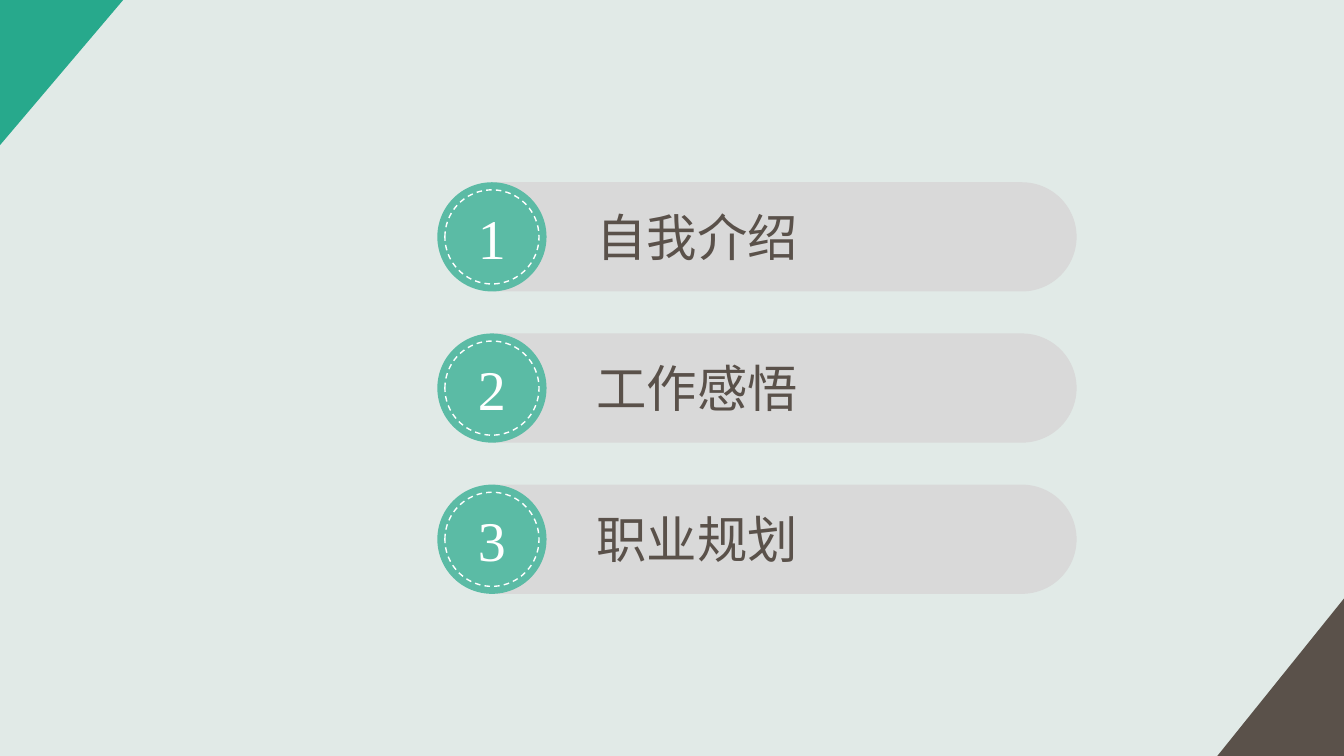
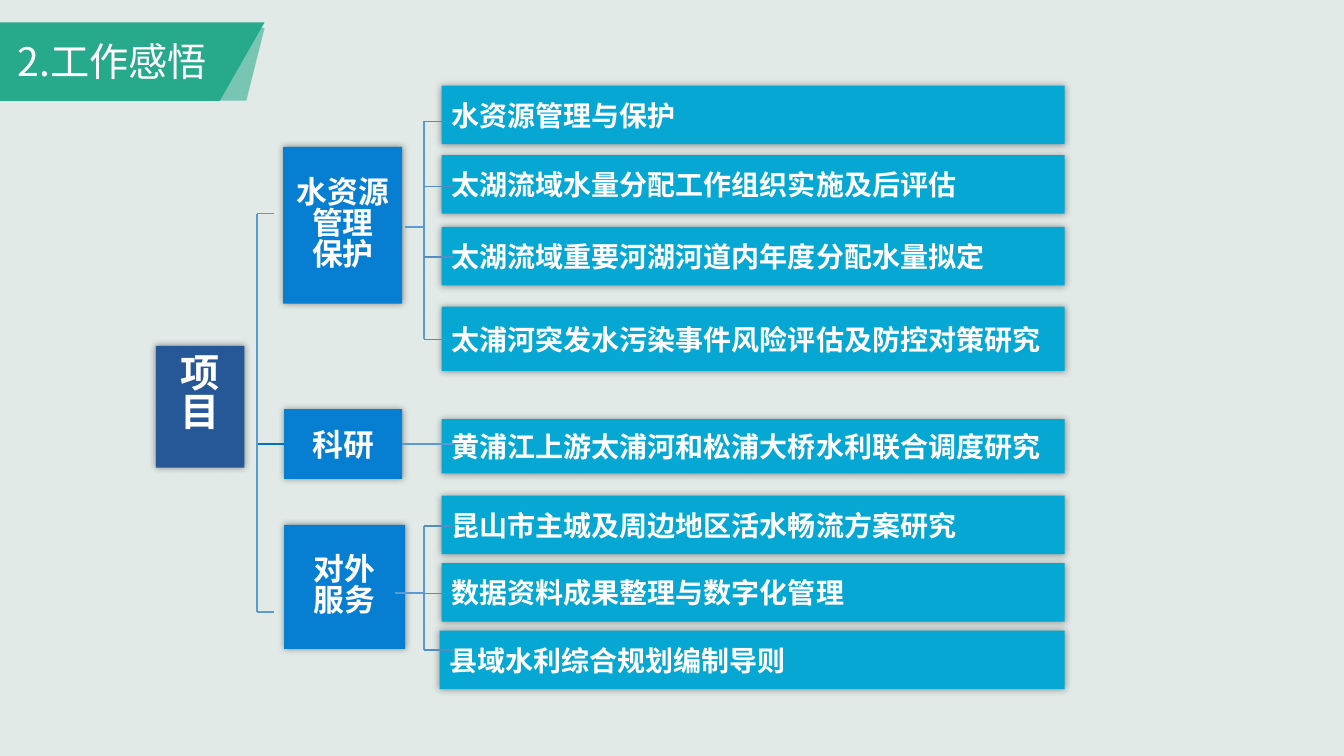
"""Builds a contents slide and a project tree slide."""
from dataclasses import dataclass

from lxml import etree
from pptx import Presentation
from pptx.dml.color import RGBColor
from pptx.enum.dml import MSO_LINE
from pptx.enum.shapes import MSO_CONNECTOR, MSO_SHAPE
from pptx.enum.text import MSO_ANCHOR, MSO_AUTO_SIZE, PP_ALIGN
from pptx.oxml.ns import qn
from pptx.util import Pt

STRAIGHT = MSO_CONNECTOR.STRAIGHT
RECTANGLE, OVAL = MSO_SHAPE.RECTANGLE, MSO_SHAPE.OVAL
TRIANGLE, PILL = MSO_SHAPE.RIGHT_TRIANGLE, MSO_SHAPE.ROUND_2_SAME_RECTANGLE
TOP, MIDDLE = MSO_ANCHOR.TOP, MSO_ANCHOR.MIDDLE
LEFT, CENTER = PP_ALIGN.LEFT, PP_ALIGN.CENTER
NO_AUTOFIT = MSO_AUTO_SIZE.NONE
DASH = MSO_LINE.DASH

WHITE = RGBColor(0xFF, 0xFF, 0xFF)
MIST = RGBColor(0xE1, 0xEA, 0xE7)
GREEN = RGBColor(0x27, 0xA9, 0x8C)
MINT = RGBColor(0x5B, 0xBB, 0xA5)
BROWN = RGBColor(0x5A, 0x51, 0x4A)
GREY = RGBColor(0xD9, 0xD9, 0xD9)
NAVY = RGBColor(0x26, 0x58, 0x97)
BLUE = RGBColor(0x06, 0x7F, 0xD2)
CYAN = RGBColor(0x06, 0xA7, 0xD2)
TRUNK = RGBColor(0x5B, 0x9B, 0xD5)
TWIG = RGBColor(0x53, 0x8D, 0xC1)
LINK = RGBColor(0x00, 0x70, 0xC0)

SANS, SERIF = "Noto Sans CJK SC", "Times New Roman"
WIDTH, HEIGHT = 960, 540
TIGHT = 0.83
ROOT_X, BRANCH_X, TWIG_END = 183.6, 303.1, 324


@dataclass(frozen=True)
class Box:
    """A frame in points."""
    left: float
    top: float
    width: float
    height: float


@dataclass(frozen=True)
class Style:
    """The look of a text."""
    size: float
    color: RGBColor = WHITE
    bold: bool = False
    font: str = SANS
    align: PP_ALIGN = CENTER
    anchor: MSO_ANCHOR = MIDDLE
    top_inset: float = 3.6


@dataclass(frozen=True)
class Node:
    """A filled box of the project tree."""
    lines: tuple[str, ...]
    box: Box
    fill: RGBColor
    style: Style


@dataclass(frozen=True)
class Row:
    """A project bar of the tree."""
    text: str
    top: float
    height: float = 41.8
    left: float = 315.4


TITLE = Style(28)
NUMBER = Style(40, font=SERIF)
ENTRY = Style(36, BROWN, align=LEFT)
ROOT = Style(28, bold=True, anchor=TOP, top_inset=7.4)
GROUP = Style(22, bold=True)
PROJECT = Style(20, bold=True, align=LEFT)

ENTRIES = ("自我介绍", "工作感悟", "职业规划")
NODES = (
    Node(("项", "目"), Box(111.4, 247, 63.2, 87), NAVY, ROOT),
    Node(("水资源管理", "保护"), Box(202.3, 105, 85, 112), BLUE, GROUP),
    Node(("对外", "服务"), Box(203, 375, 86.5, 88.5), BLUE, GROUP),
)
RESEARCH = Node(("科研",), Box(203, 292.2, 84.3, 49.8), BLUE, GROUP)
ROWS = (
    Row("水资源管理与保护", 61.2),
    Row("太湖流域水量分配工作组织实施及后评估", 110.9),
    Row("太湖流域重要河湖河道内年度分配水量拟定", 162),
    Row("太浦河突发水污染事件风险评估及防控对策研究", 219, 46),
    Row("黄浦江上游太浦河和松浦大桥水利联合调度研究", 299.4, 38.8),
    Row("昆山市主城及周边地区活水畅流方案研究", 354),
    Row("数据资料成果整理与数字化管理", 402.3),
    Row("县域水利综合规划编制导则", 450.4, left=314),
)
ROW_RIGHT = 760.5
BRANCHES = ((86.6, 133.2, 183.7, 242.4), (375.8, 424, 464.2))


def write(shape, lines: tuple[str, ...], style: Style) -> None:
    """Fill a shape with one paragraph per line."""
    frame = shape.text_frame
    frame.word_wrap = True
    frame.auto_size = NO_AUTOFIT
    frame.vertical_anchor = style.anchor
    frame.margin_top = Pt(style.top_inset)
    for index, line in enumerate(lines):
        para = frame.add_paragraph() if index else frame.paragraphs[0]
        para.alignment = style.align
        if len(lines) > 1:
            para.line_spacing = TIGHT
        span = para.add_run()
        span.text = line
        span.font.size = Pt(style.size)
        span.font.bold = style.bold
        span.font.color.rgb = style.color
        span.font.name = style.font
        east = etree.SubElement(span.font._element, qn("a:ea"))
        east.set("typeface", style.font)


def paint(shape, fill: RGBColor) -> None:
    """Give a shape a flat fill without line or shadow."""
    shape.shadow.inherit = False
    shape.fill.solid()
    shape.fill.fore_color.rgb = fill
    shape.line.fill.background()


def add_filled(page, kind: MSO_SHAPE, box: Box, fill: RGBColor):
    """Add a flat preset shape."""
    shape = page.shapes.add_shape(
        kind, Pt(box.left), Pt(box.top), Pt(box.width), Pt(box.height))
    paint(shape, fill)
    return shape


def add_turned(page, kind: MSO_SHAPE, seen: Box, fill: RGBColor, angle: int):
    """Add a shape turned a quarter so that it covers the seen frame."""
    shift = (seen.width - seen.height) / 2
    frame = Box(seen.left + shift, seen.top - shift, seen.height, seen.width)
    shape = add_filled(page, kind, frame, fill)
    shape.rotation = angle
    return shape


def add_outline(page, points: list[tuple[float, float]], fill: RGBColor):
    """Add a flat closed polygon."""
    builder = page.shapes.build_freeform(*points[0], scale=Pt(1))
    builder.add_line_segments(points[1:], close=True)
    shape = builder.convert_to_shape()
    paint(shape, fill)
    return shape


def add_line(page, start: tuple[float, float], end: tuple[float, float],
             color: RGBColor = TRUNK, weight: float = 1.5):
    """Add a straight line."""
    line = page.shapes.add_connector(
        STRAIGHT, Pt(start[0]), Pt(start[1]), Pt(end[0]), Pt(end[1]))
    line.line.color.rgb = color
    line.line.width = Pt(weight)
    etree.SubElement(line._element.spPr, qn("a:effectLst"))
    return line


def add_node(page, node: Node):
    """Add a glowing box with text."""
    shape = add_filled(page, RECTANGLE, node.box, node.fill)
    effects = shape._element.spPr.find(qn("a:effectLst"))
    glow = etree.SubElement(effects, qn("a:outerShdw"), blurRad=str(Pt(5)),
                            dist="0", dir="0", algn="ctr", rotWithShape="0")
    black = etree.SubElement(glow, qn("a:srgbClr"), val="000000")
    etree.SubElement(black, qn("a:alpha"), val="40000")
    write(shape, node.lines, node.style)
    return shape


def add_title(page, text: str) -> None:
    """Draw the title band and put the title on it."""
    pale = add_outline(page, [(0, 20), (188.6, 20), (176.4, 72), (0, 72)], GREEN)
    color = pale._element.spPr.find(qn("a:solidFill"))[0]
    etree.SubElement(color, qn("a:alpha"), val="56000")
    add_outline(page, [(0, 15.8), (188.6, 15.8), (157, 72), (0, 72)], GREEN)
    title = page.shapes.title
    title.left, title.top = Pt(-1.4), Pt(23)
    title.width, title.height = Pt(163.4), Pt(41)
    page.shapes._spTree.append(title._element)
    write(title, (text,), TITLE)


def add_entry(page, number: int, text: str) -> None:
    """Add one numbered line of the contents."""
    top = 130.2 + 108 * (number - 1)
    pill = add_turned(page, PILL, Box(352, top, 417, 78), GREY, 90)
    pill.adjustments[0] = 0.5
    disc = add_filled(page, OVAL, Box(312.4, top, 78, 78), MINT)
    write(disc, (str(number),), NUMBER)
    ring = add_filled(page, OVAL, Box(317.8, top + 5.4, 67.2, 67.2), MINT)
    ring.fill.background()
    ring.line.color.rgb = WHITE
    ring.line.width = Pt(1)
    ring.line.dash_style = DASH
    label = page.shapes.add_textbox(Pt(419), Pt(top + 13), Pt(215), Pt(51))
    write(label, (text,), ENTRY)


def build_contents(deck) -> None:
    """Build the contents slide."""
    page = deck.slides.add_slide(deck.slide_layouts[6])
    add_turned(page, TRIANGLE, Box(0, 0, 88, 103.7), GREEN, 90)
    add_turned(page, TRIANGLE, Box(WIDTH - 90.5, HEIGHT - 112.5, 90.5, 112.5), BROWN, 270)
    for number, text in enumerate(ENTRIES, start=1):
        add_entry(page, number, text)


def build_tree(deck) -> None:
    """Build the project tree slide."""
    page = deck.slides.add_slide(deck.slide_layouts[5])
    add_title(page, "2.工作感悟")
    for node in NODES:
        add_node(page, node)
    research = add_node(page, RESEARCH)
    for row in ROWS:
        box = Box(row.left, row.top, ROW_RIGHT - row.left, row.height)
        add_node(page, Node((row.text,), box, CYAN, PROJECT))

    middle = RESEARCH.box.top + RESEARCH.box.height / 2
    right = RESEARCH.box.left + RESEARCH.box.width
    add_line(page, (ROOT_X, middle), (RESEARCH.box.left, middle), LINK).end_connect(research, 1)
    add_line(page, (right, middle), (TWIG_END, middle)).begin_connect(research, 3)
    add_line(page, (ROOT_X, 152.6), (ROOT_X, 437))
    for level, weight in ((152.6, 0.5), (437, 1.5)):
        add_line(page, (ROOT_X, level), (195.8, level), weight=weight)
    for levels in BRANCHES:
        add_line(page, (BRANCH_X, levels[0]), (BRANCH_X, levels[-1]))
        for level in levels:
            add_line(page, (BRANCH_X, level), (TWIG_END, level), TWIG, 1)
    for start, level in ((289.4, 162), (282.2, 423.4)):
        add_line(page, (start, level), (BRANCH_X, level))


def main() -> None:
    """Build and save the deck."""
    deck = Presentation()
    deck.slide_width, deck.slide_height = Pt(WIDTH), Pt(HEIGHT)
    backdrop = deck.slide_master.background.fill
    backdrop.solid()
    backdrop.fore_color.rgb = MIST
    build_contents(deck)
    build_tree(deck)
    deck.save("out.pptx")


if __name__ == "__main__":
    main()
